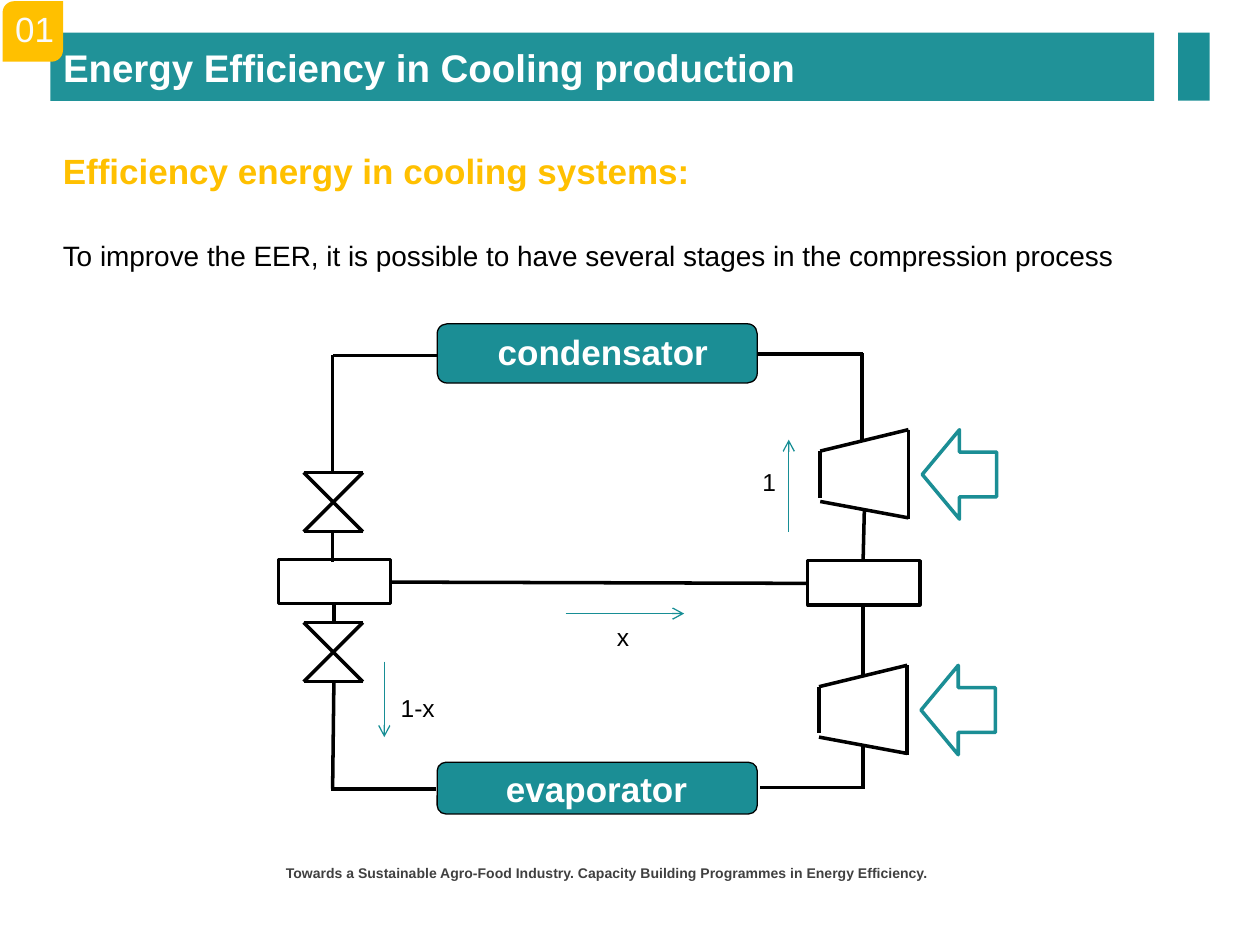
from pptx import Presentation
from pptx import util as u
from pptx.dml.color import RGBColor
from pptx.enum import shapes as kinds, text as t
from pptx.oxml.ns import qn
from lxml import etree

Inches = u.Inches
TEAL, AMBER, BLACK, WHITE = "1B8E95", "FFC000", "000000", "FFFFFF"
SHAPE = kinds.MSO_SHAPE

presentation = Presentation()
presentation.slide_width, presentation.slide_height = Inches(10), Inches(7.5)
slide = presentation.slides.add_slide(presentation.slide_layouts[5])


def write(content, box, shape=None, size=14, color=BLACK, bold=False,
          align=t.PP_ALIGN.LEFT, wrap=True):
    """Put formatted text in the given shape, or in a new text box."""
    left, top, width, height = map(Inches, box)
    if shape is None:
        shape = slide.shapes.add_textbox(left, top, width, height)
    else:
        shape.left, shape.top, shape.width, shape.height = left, top, width, height
    frame = shape.text_frame
    frame.word_wrap = wrap
    frame.auto_size = t.MSO_AUTO_SIZE.NONE
    frame.vertical_anchor = t.MSO_ANCHOR.MIDDLE
    paragraph = frame.paragraphs[0]
    paragraph.text = content
    paragraph.alignment = align
    font = paragraph.font
    font.name, font.size, font.bold = "Arial", u.Pt(size), bold
    font.color.rgb = RGBColor.from_string(color)


def draw(kind, box, fill=None, line=None, width=2.0):
    """Add a preset shape; without fill or line that part stays empty."""
    shape = slide.shapes.add_shape(kind, *map(Inches, box))
    shape.shadow.inherit = False
    if fill:
        shape.fill.solid()
        shape.fill.fore_color.rgb = RGBColor.from_string(fill)
    else:
        shape.fill.background()
    if line:
        shape.line.color.rgb = RGBColor.from_string(line)
        shape.line.width = u.Pt(width)
    else:
        shape.line.fill.background()
    return shape


# Title bar, side block and section badge
title = slide.shapes.title
title.fill.solid()
title.fill.fore_color.rgb = RGBColor.from_string("209298")
write("Energy Efficiency in Cooling production", (0.4, 0.26, 8.76, 0.54),
      shape=title, size=22, color=WHITE, bold=True)
draw(SHAPE.RECTANGLE, (9.35, 0.26, 0.25, 0.54), fill=TEAL)
badge = draw(SHAPE.ROUND_2_DIAG_RECTANGLE, (0.02, 0.01, 0.48, 0.48), fill=AMBER)
badge.adjustments[0], badge.adjustments[1] = 0.19, 0
write("01", (0.02, 0.01, 0.51, 0.44), size=20, color="FAFAFA",
      align=t.PP_ALIGN.CENTER, wrap=False)

# Introduction and footer
write("Efficiency energy in cooling systems:", (0.4, 1.13, 9.57, 0.44),
      size=20, color=AMBER, bold=True, align=t.PP_ALIGN.JUSTIFY)
write("To improve the EER, it is possible to have several stages in the "
      "compression process", (0.4, 1.84, 9.45, 0.37), size=16,
      align=t.PP_ALIGN.JUSTIFY)
write("Towards a Sustainable Agro-Food Industry. Capacity Building Programmes "
      "in Energy Efficiency.", (2.17, 6.82, 5.5, 0.21), size=8,
      color="404040", bold=True)

# Heat exchangers
for name, top, height, label_left, label_top in (
        ("condensator", 2.57, 0.47, 3.78, 2.57),
        ("evaporator", 6.05, 0.41, 3.73, 6.04)):
    draw(SHAPE.ROUNDED_RECTANGLE, (3.47, top, 2.54, height),
         fill=TEAL, line=BLACK, width=0.75)
    write(name, (label_left, label_top, 2.01, 0.44), size=20, color=WHITE,
          bold=True, align=t.PP_ALIGN.CENTER)

# Intermediate vessels
for left, top in ((2.21, 4.44), (6.41, 4.45)):
    draw(SHAPE.RECTANGLE, (left, top, 0.89, 0.35), line=BLACK)

# Pipes, as x1, y1, x2, y2
lines = [
    (2.64, 3.75, 2.64, 2.82), (3.47, 2.82, 2.64, 2.82),
    (2.64, 4.46, 2.64, 4.22), (2.65, 4.94, 2.65, 4.8),
    (2.64, 6.26, 2.65, 5.41), (3.46, 6.26, 2.63, 6.26),
    (6.85, 2.81, 6.02, 2.81), (6.84, 3.51, 6.84, 2.8),
    (6.85, 4.45, 6.86, 4.05), (6.85, 5.37, 6.85, 4.82),
    (6.85, 5.92, 6.85, 6.26), (6.86, 6.25, 6.03, 6.25),
    (6.41, 4.63, 3.1, 4.62),
]

# Expansion valves
left, right = 2.41, 2.88
for top in (3.75, 4.94):
    bottom = top + 0.47
    lines += [(left, top, right, top), (left, bottom, right, bottom),
              (left, bottom, right, top), (right, bottom, left, top)]

# Compressors with their power input
for left, top in ((6.51, 3.41), (6.5, 5.28)):
    right = left + 0.7
    lines += [(right, top, right, top + 0.71),
              (left, top + 0.17, left, top + 0.54),
              (right, top, left, top + 0.17),
              (right, top + 0.7, left, top + 0.57)]
    power = draw(SHAPE.RIGHT_ARROW, (left + 0.81, top, 0.59, 0.71),
                 fill=WHITE, line=TEAL)
    power.rotation = 180

# Flow arrows
flows = [(4.49, 4.87, 5.43, 4.87), (3.05, 5.25, 3.05, 5.85),
         (6.26, 4.22, 6.26, 3.49)]

for ends in lines + flows:
    is_flow = ends in flows
    connector = slide.shapes.add_connector(
        kinds.MSO_CONNECTOR.STRAIGHT, *map(Inches, ends))
    connector.line.color.rgb = RGBColor.from_string("178E95" if is_flow else BLACK)
    connector.line.width = u.Pt(0.75 if is_flow else 2)
    properties = connector.element.spPr
    if is_flow:
        etree.SubElement(properties.find(qn("a:ln")), qn("a:tailEnd"), type="arrow")
    etree.SubElement(properties, qn("a:effectLst"))

for label, left, top in (("1-x", 2.62, 5.45), ("x", 4.25, 4.88), ("1", 5.41, 3.65)):
    write(label, (left, top, 1.39, 0.34), align=t.PP_ALIGN.CENTER)

presentation.save("out.pptx")
